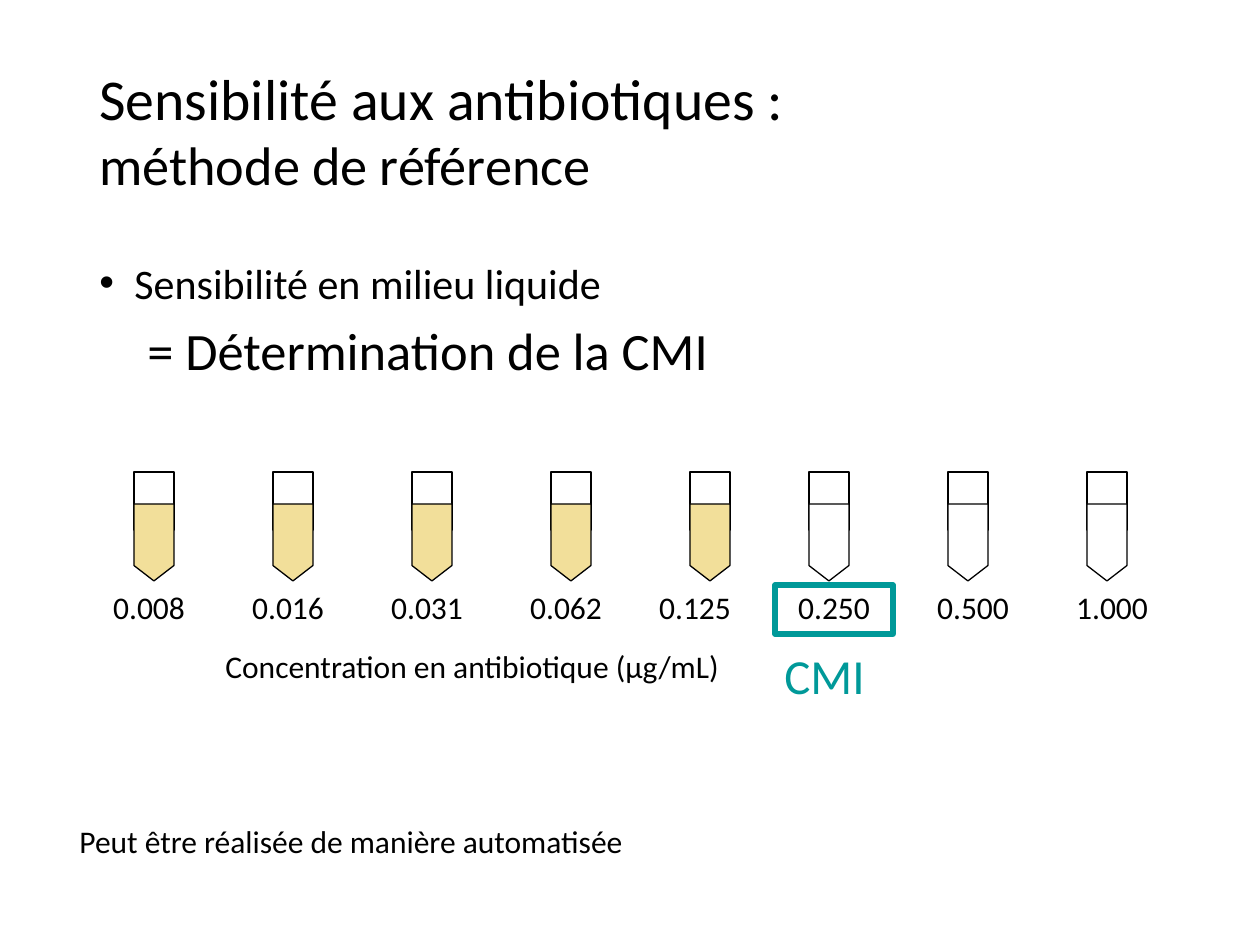
from pptx import Presentation
from pptx.dml.color import RGBColor
from pptx.enum.shapes import MSO_SHAPE as Shape
from pptx.enum.text import MSO_ANCHOR as Anchor, PP_ALIGN as Align
from pptx.oxml.ns import qn
from pptx.util import Emu, Pt
from lxml.etree import SubElement

PX_PER_INCH = 126
BLACK, WHITE, TEAL, BROTH = "000000", "FFFFFF", "009999", "F2DF9A"


def px(length):
    return Emu(round(length * 914400 / PX_PER_INCH))


def color(code):
    return RGBColor.from_string(code)


class SlideWriter:
    """Holds the text style and the current page."""

    font = "Calibri"

    def __init__(self, page):
        self.page = page

    def text(self, left, top, width, height, lines, sizes, ink=BLACK,
             align=Align.LEFT, anchor=Anchor.TOP):
        """Write text; sizes holds one point size per run."""
        box = self.page.shapes.add_textbox(px(left), px(top), px(width), px(height))
        frame = box.text_frame
        frame.word_wrap = True
        frame.vertical_anchor = anchor
        frame.text = lines
        spans = [span for para in frame.paragraphs for span in para.runs]
        for span, size in zip(spans, sizes):
            span.font.name = self.font
            span.font.size = Pt(size)
            span.font.color.rgb = color(ink)
        for para in frame.paragraphs:
            para.alignment = align
        return frame

    def indent(self, para, margin, hanging, bullet=None):
        props = para._p.get_or_add_pPr()
        props.set("marL", str(px(margin)))
        props.set("indent", str(-px(hanging)))
        if bullet:
            SubElement(props, qn("a:buFont"), typeface="Arial")
            SubElement(props, qn("a:buChar"), char=bullet)

    def shape(self, kind, left, top, width, height, fill=None, line=BLACK,
              weight=0.75, parent=None):
        shapes = (parent or self.page).shapes
        item = shapes.add_shape(kind, px(left), px(top), px(width), px(height))
        item.shadow.inherit = False
        if fill:
            item.fill.solid()
            item.fill.fore_color.rgb = color(fill)
        else:
            item.fill.background()
        item.line.color.rgb = color(line)
        item.line.width = Pt(weight)

    def tube(self, left, top, fill):
        group = self.page.shapes.add_group_shape()
        self.shape(Shape.RECTANGLE, left, top, 40, 58, WHITE, parent=group)
        self.shape(Shape.FLOWCHART_OFFPAGE_CONNECTOR, left, top + 32, 40, 77,
                   fill, parent=group)


def main():
    deck = Presentation()
    deck.slide_width, deck.slide_height = px(1260), px(945)
    writer = SlideWriter(deck.slides.add_slide(deck.slide_layouts[6]))

    writer.text(87, 38, 1086, 183,
                "Sensibilité aux antibiotiques :\vméthode de référence",
                [33, 31], anchor=Anchor.MIDDLE)
    body = writer.text(87, 251, 1086, 600,
                       "Sensibilité en milieu liquide\n= Détermination de la CMI",
                       [24, 30])
    method, result = body.paragraphs
    writer.indent(method, 35, 35, "•")
    result.level = 1
    result.space_before = Pt(6)
    writer.indent(result, 77, 29)

    step = 139
    turbid = [134 + step * i for i in range(5)]
    clear = [809 + step * i for i in range(3)]
    for left in turbid + clear:
        writer.tube(left, 472, BROTH if left in turbid else WHITE)

    concentrations = ["0.008", "0.016", "0.031", "0.062",
                      "0.125", "0.250", "0.500", "1.000"]
    for i, value in enumerate(concentrations):
        start = 94 if i < 4 else 84
        writer.text(start + step * i, 582, 110, 50, value, [18], align=Align.CENTER)

    writer.shape(Shape.RECTANGLE, 775, 585, 118, 49, line=TEAL, weight=3)
    writer.text(772, 639, 115, 72, "CMI", [28], TEAL)
    writer.text(213, 641, 553, 50, "Concentration en antibiotique (µg/mL)", [18])
    writer.text(67, 816, 576, 50, "Peut être réalisée de manière automatisée", [18])
    deck.save("out.pptx")


if __name__ == "__main__":
    main()
